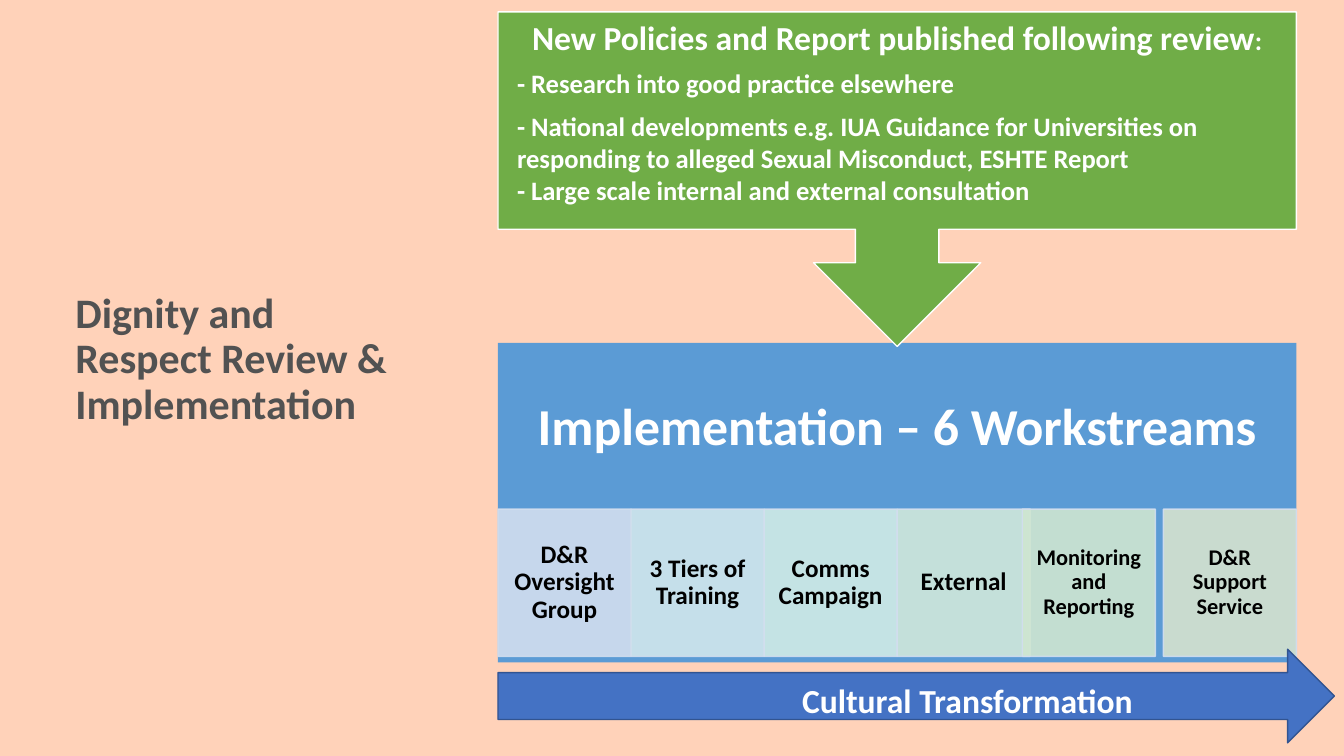
from lxml.etree import SubElement
from pptx import Presentation
from pptx.dml.color import RGBColor
from pptx.enum.shapes import MSO_SHAPE as Shape
from pptx.enum.text import MSO_ANCHOR as Anchor, PP_ALIGN as Align
from pptx.oxml.ns import qn
from pptx.util import Cm, Pt

FONT = "Calibri"
COLORS = {
    "background": "FFD2B9", "title": "525252", "white": "FFFFFF", "black": "000000",
    "panel": "5B9BD5", "tile_line": "D2DEEF", "callout": "70AD47",
    "arrow": "4472C4", "arrow_line": "325491",
}
# Label, tile colour, text size, sideways shift in cm
WORKSTREAMS = [
    ("D&R Oversight Group", "D2DEEF", 18, 0),
    ("3 Tiers of Training", "D1E7ED", 18, 0),
    ("Comms Campaign", "D0EBE6", 18, 0),
    ("External", "D0E8DB", 18, 0),
    ("Monitoring and Reporting", "CFE6D1", 16, -0.2),
    ("D&R Support Service", "D5E3CF", 16, 0),
]
REVIEW_POINTS = [
    ("- Research into good practice elsewhere", 0.9, 7.5),
    ("- National developments e.g. IUA Guidance for Universities on responding "
     "to alleged Sexual Misconduct, ESHTE Report", 1.0, 0),
    ("- Large scale internal and external consultation", 1.0, 0),
]


def paint(fill, color, alpha=None):
    fill.solid()
    fill.fore_color.rgb = RGBColor.from_string(color)
    if alpha is not None:
        color_element = next(fill._xPr.iter(qn("a:srgbClr")))
        SubElement(color_element, qn("a:alpha"), val=str(alpha * 1000))


def add_box(slide, kind, box, fill, line=None, alpha=None):
    shape = slide.shapes.add_shape(kind, *(Cm(length) for length in box))
    shape.shadow.inherit = False
    paint(shape.fill, fill, alpha)
    if line:
        paint(shape.line.fill, line, alpha)
        shape.line.width = Pt(1)
    else:
        shape.line.fill.background()
    return shape


def add_text_box(slide, box):
    return slide.shapes.add_textbox(*(Cm(length) for length in box))


def set_frame(shape, anchor=Anchor.MIDDLE, side=0.25, end=0.13):
    frame = shape.text_frame
    frame.word_wrap = True
    frame.vertical_anchor = anchor
    frame.margin_left = frame.margin_right = Cm(side)
    frame.margin_top = frame.margin_bottom = Cm(end)
    return frame


def write(paragraph, text, size, color="white", align=Align.CENTER, spacing=0.9, after=0):
    paragraph.alignment = align
    paragraph.line_spacing = spacing
    paragraph.space_before = Pt(0)
    paragraph.space_after = Pt(after)
    run = paragraph.add_run()
    run.text = text
    run.font.name = FONT
    run.font.size = Pt(size)
    run.font.bold = True
    run.font.color.rgb = RGBColor.from_string(COLORS[color])


def place_title(slide, left, top, width, height):
    title = slide.shapes.title
    title.left, title.top, title.width, title.height = map(Cm, (left, top, width, height))
    write(set_frame(title).paragraphs[0], "Dignity and Respect Review & Implementation",
          30, color="title", align=Align.LEFT)


def add_implementation(slide, left, top, width, height):
    add_box(slide, Shape.RECTANGLE, (left, top, width, height), COLORS["panel"])
    heading = add_text_box(slide, (left, top, width, 4.34))
    write(set_frame(heading, side=0.74, end=0.74).paragraphs[0],
          "Implementation – 6 Workstreams", 37)

    tile_width = width / len(WORKSTREAMS)
    for index, (label, fill, size, shift) in enumerate(WORKSTREAMS):
        tile = add_box(slide, Shape.RECTANGLE,
                       (left + index * tile_width + shift, top + 4.19, tile_width, 3.71),
                       fill, COLORS["tile_line"], alpha=90)
        write(set_frame(tile, side=0.3, end=0.08).paragraphs[0], label, size, color="black")


def add_review_callout(slide, left, top, width, height):
    callout = add_box(slide, Shape.DOWN_ARROW_CALLOUT, (left, top, width, height),
                      COLORS["callout"], COLORS["white"])
    frame = set_frame(callout, anchor=Anchor.TOP, side=0.48, end=0.25)
    heading = frame.paragraphs[0]
    write(heading, "New Policies and Report published following review", 24, after=9)
    write(heading, ":", 19, after=9)
    for text, spacing, after in REVIEW_POINTS:
        write(frame.add_paragraph(), text, 19, align=Align.LEFT, spacing=spacing, after=after)


def add_transformation_arrow(slide, left, top, width, height):
    add_box(slide, Shape.RIGHT_ARROW, (left, top, width, height),
            COLORS["arrow"], COLORS["arrow_line"])
    label = add_text_box(slide, (left + 4.82, top + 0.64, 14.02, 1.27))
    write(set_frame(label, anchor=Anchor.TOP).paragraphs[0],
          "Cultural Transformation", 24, spacing=1.0)


def main():
    presentation = Presentation()
    presentation.slide_width, presentation.slide_height = Cm(33.87), Cm(19.05)
    slide = presentation.slides.add_slide(presentation.slide_layouts[5])
    paint(slide.background.fill, COLORS["background"])

    column_left, column_width = 12.55, 20.12
    place_title(slide, 1.65, 1.78, 8.79, 14.6)
    add_implementation(slide, column_left, 8.64, column_width, 8.05)
    add_review_callout(slide, column_left, 0.3, column_width, 8.43)
    add_transformation_arrow(slide, column_left, 16.36, 21.08, 2.36)
    presentation.save("out.pptx")


if __name__ == "__main__":
    main()
